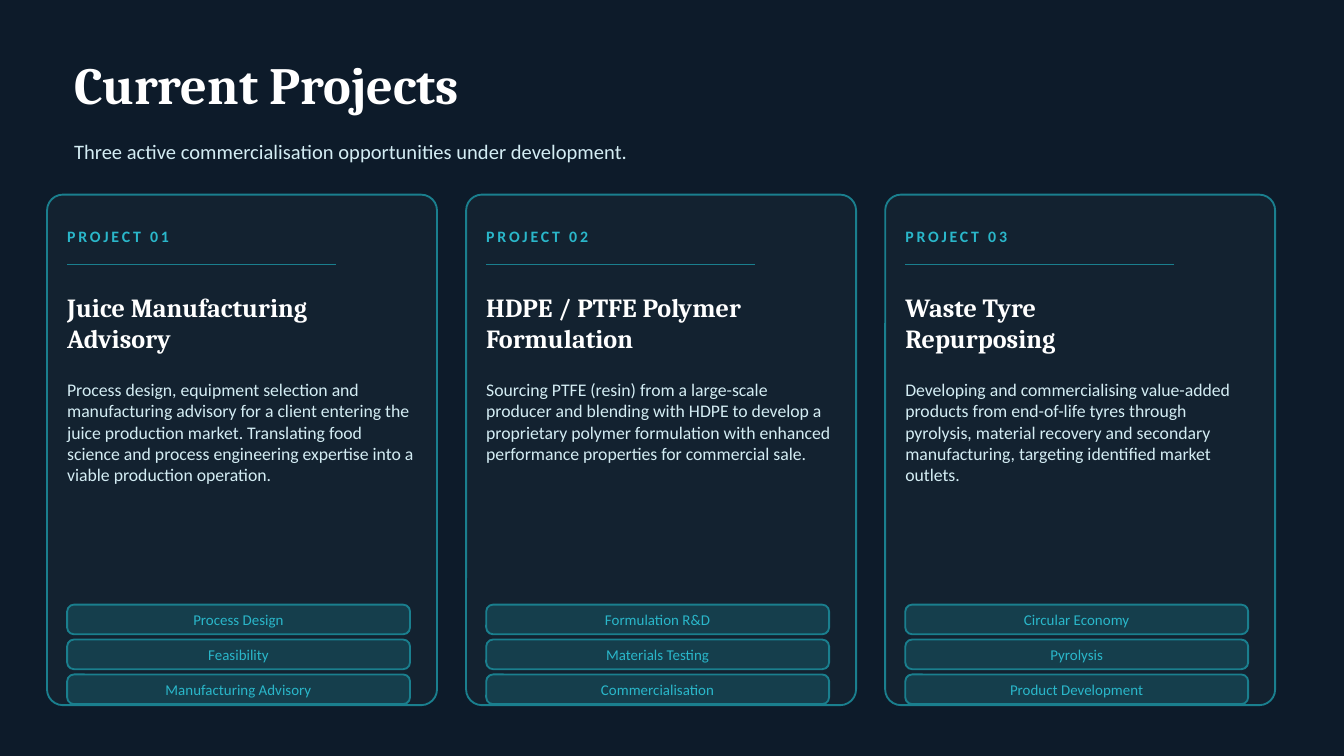
"""Build the Current Projects slide with three project cards."""
from dataclasses import dataclass

from lxml import etree
from pptx import Presentation
from pptx.dml.color import RGBColor
from pptx.enum.shapes import MSO_CONNECTOR, MSO_SHAPE
from pptx.enum.text import MSO_ANCHOR, PP_ALIGN
from pptx.oxml.ns import qn
from pptx.util import Cm, Pt

ROUNDED = MSO_SHAPE.ROUNDED_RECTANGLE
STRAIGHT = MSO_CONNECTOR.STRAIGHT
TOP, MIDDLE = MSO_ANCHOR.TOP, MSO_ANCHOR.MIDDLE
LEFT, CENTER = PP_ALIGN.LEFT, PP_ALIGN.CENTER


@dataclass(frozen=True)
class TextStyle:
    font: str
    size: float
    color: str
    bold: bool = False
    spacing: float = 0


@dataclass(frozen=True)
class Theme:
    background: str = "0D1B2A"
    card: str = "132230"
    teal: str = "1A7F8E"
    line_width: float = 1
    tag_opacity: int = 30
    title: TextStyle = TextStyle("Cambria", 28, "FFFFFF", bold=True)
    subtitle: TextStyle = TextStyle("Calibri", 11, "D4EDF4")
    label: TextStyle = TextStyle("Calibri", 8.5, "2AB7CA", bold=True, spacing=1.5)
    heading: TextStyle = TextStyle("Cambria", 14, "FFFFFF", bold=True)
    body: TextStyle = TextStyle("Calibri", 9.5, "D4EDF4")
    tag: TextStyle = TextStyle("Calibri", 8, "2AB7CA")


class SlideBuilder:
    def __init__(self, slide, theme):
        self.slide = slide
        self.theme = theme
        fill = slide.background.fill
        fill.solid()
        fill.fore_color.rgb = RGBColor.from_string(theme.background)

    def set_text(self, shape, text, style, anchor=MIDDLE, align=LEFT):
        frame = shape.text_frame
        frame.word_wrap = True
        frame.vertical_anchor = anchor
        frame.margin_left = frame.margin_right = 0
        frame.margin_top = frame.margin_bottom = 0
        frame.text = text
        for paragraph in frame.paragraphs:
            paragraph.alignment = align
            for run in paragraph.runs:
                run.font.name = style.font
                run.font.size = Pt(style.size)
                run.font.bold = style.bold
                run.font.color.rgb = RGBColor.from_string(style.color)
                if style.spacing:
                    run.font._element.set("spc", str(int(style.spacing * 100)))

    def text(self, left, top, width, height, text, style, anchor=MIDDLE):
        box = self.slide.shapes.add_textbox(Cm(left), Cm(top), Cm(width), Cm(height))
        self.set_text(box, text, style, anchor)

    def panel(self, left, top, width, height, radius, color):
        panel = self.slide.shapes.add_shape(ROUNDED, Cm(left), Cm(top), Cm(width), Cm(height))
        panel.shadow.inherit = False
        panel.adjustments[0] = radius / min(width, height)
        panel.fill.solid()
        panel.fill.fore_color.rgb = RGBColor.from_string(color)
        panel.line.color.rgb = RGBColor.from_string(self.theme.teal)
        panel.line.width = Pt(self.theme.line_width)
        return panel

    def tag(self, left, top, width, height, text):
        tag = self.panel(left, top, width, height, 0.13, self.theme.teal)
        color = tag._element.spPr.find(qn("a:solidFill"))[0]
        etree.SubElement(color, qn("a:alpha")).set("val", str(self.theme.tag_opacity * 1000))
        self.set_text(tag, text, self.theme.tag, align=CENTER)

    def rule(self, left, top, length):
        rule = self.slide.shapes.add_connector(
            STRAIGHT, Cm(left), Cm(top), Cm(left + length), Cm(top))
        rule.line.color.rgb = RGBColor.from_string(self.theme.teal)
        rule.line.width = Pt(self.theme.line_width)
        etree.SubElement(rule._element.spPr, qn("a:effectLst"))

    def project(self, left, number, heading, body, tags):
        theme = self.theme
        inner, width = left + 0.38, 6.6
        self.panel(left, 3.68, 7.37, 9.65, 0.3, theme.card)
        self.text(inner, 4.11, width, 0.71, f"PROJECT {number:02}", theme.label)
        self.rule(inner, 5, 5.08)
        self.text(inner, 5.18, width, 1.83, heading, theme.heading)
        self.text(inner, 7.16, width, 3.81, body, theme.body, TOP)
        for row, tag in enumerate(tags):
            self.tag(inner, 11.43 + row * 0.66, 6.48, 0.56, tag)


PROJECTS = [
    ("Juice Manufacturing\nAdvisory",
     "Process design, equipment selection and manufacturing advisory for a client "
     "entering the juice production market. Translating food science and process "
     "engineering expertise into a viable production operation.",
     ("Process Design", "Feasibility", "Manufacturing Advisory")),
    ("HDPE / PTFE Polymer\nFormulation",
     "Sourcing PTFE (resin) from a large-scale producer and blending with HDPE to "
     "develop a proprietary polymer formulation with enhanced performance properties "
     "for commercial sale.",
     ("Formulation R&D", "Materials Testing", "Commercialisation")),
    ("Waste Tyre\nRepurposing",
     "Developing and commercialising value-added products from end-of-life tyres "
     "through pyrolysis, material recovery and secondary manufacturing, targeting "
     "identified market outlets.",
     ("Circular Economy", "Pyrolysis", "Product Development")),
]


def main():
    deck = Presentation()
    deck.slide_width, deck.slide_height = Cm(25.4), Cm(14.29)
    theme = Theme()
    builder = SlideBuilder(deck.slides.add_slide(deck.slide_layouts[6]), theme)
    builder.text(1.4, 0.76, 22.86, 1.65, "Current Projects", theme.title)
    builder.text(1.4, 2.41, 21.59, 0.89,
                 "Three active commercialisation opportunities under development.",
                 theme.subtitle)
    for index, (heading, body, tags) in enumerate(PROJECTS):
        builder.project(0.89 + index * 7.92, index + 1, heading, body, tags)
    deck.save("out.pptx")


if __name__ == "__main__":
    main()
